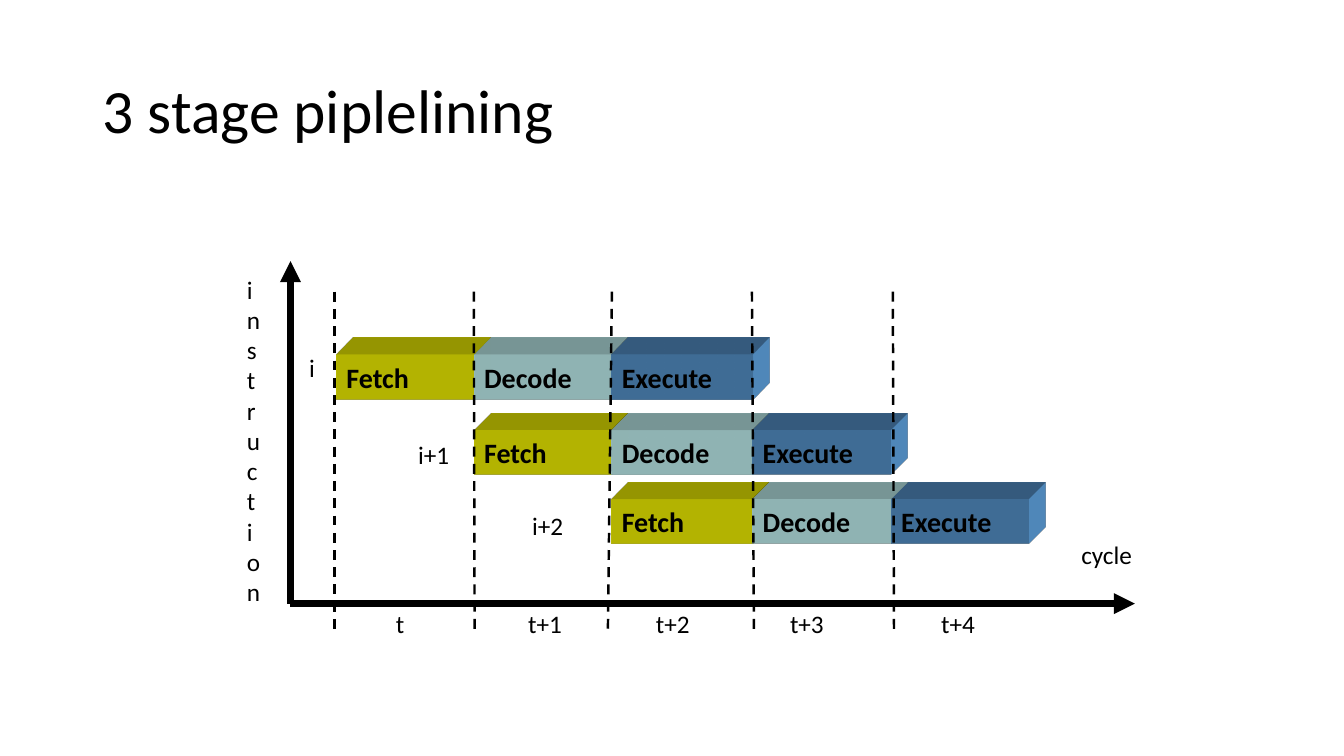
import pptx
import pptx.util
import pptx.dml.color
import pptx.enum.dml
import pptx.enum.shapes
import pptx.enum.text
import pptx.oxml
import pptx.oxml.ns

Cm = pptx.util.Cm
BLACK = pptx.dml.color.RGBColor(0x00, 0x00, 0x00)
YELLOW = pptx.dml.color.RGBColor(0xFF, 0xFF, 0x00)
CYAN = pptx.dml.color.RGBColor(0xCC, 0xFF, 0xFF)
BLUE = pptx.dml.color.RGBColor(0x5B, 0x9B, 0xD5)
SPACE = pptx.oxml.ns.nsdecls("a")

deck = pptx.Presentation()
deck.slide_width = Cm(33.87)
deck.slide_height = Cm(19.05)
slide = deck.slides.add_slide(deck.slide_layouts[6])


def write(shape, words, size, wrap=False, bold=False):
    frame = shape.text_frame
    frame.text = words
    frame.word_wrap = wrap
    para = frame.paragraphs[0]
    para.alignment = pptx.enum.text.PP_ALIGN.LEFT
    font = para.runs[0].font
    font.name = "Calibri"
    font.size = pptx.util.Pt(size)
    font.bold = bold
    font.color.rgb = BLACK
    return frame


def draw(left, top, right, bottom, width):
    line = slide.shapes.add_connector(
        pptx.enum.shapes.MSO_CONNECTOR.STRAIGHT,
        Cm(left), Cm(top), Cm(right), Cm(bottom))
    line.line.color.rgb = BLACK
    line.line.width = pptx.util.Pt(width)
    line._element.spPr.append(pptx.oxml.parse_xml(f"<a:effectLst {SPACE}/>"))
    return line


title = slide.shapes.add_textbox(Cm(2.34), Cm(1.02), Cm(29.21), Cm(3.68))
frame = write(title, "3 stage piplelining", 44, wrap=True)
frame.vertical_anchor = pptx.enum.text.MSO_ANCHOR.MIDDLE
frame.paragraphs[0].line_spacing = 0.9

edges = [8.48, 11.95, 15.42, 18.97, 22.46, 25.93]
stages = [("Fetch", YELLOW), ("Decode", CYAN), ("Execute", BLUE)]
for row, top in enumerate([8.94, 10.85, 12.57]):
    for col, (name, color) in enumerate(stages, row):
        block = slide.shapes.add_shape(
            pptx.enum.shapes.MSO_SHAPE.RECTANGLE,
            Cm(edges[col]), Cm(top), Cm(edges[col + 1] - edges[col]), Cm(1.12))
        block.shadow.inherit = False
        block.fill.solid()
        block.fill.fore_color.rgb = color
        block.line.fill.background()
        frame = write(block, name, 20, bold=True)
        frame.vertical_anchor = pptx.enum.text.MSO_ANCHOR.MIDDLE
        props = block._element.spPr
        props.append(pptx.oxml.parse_xml(
            f'<a:scene3d {SPACE}><a:camera prst="legacyObliqueTopRight"/>'
            '<a:lightRig rig="legacyFlat3" dir="b"/></a:scene3d>'))
        props.append(pptx.oxml.parse_xml(
            f'<a:sp3d {SPACE} extrusionH="430200" prstMaterial="legacyMatte">'
            '<a:bevelT w="13500" h="13500" prst="angle"/>'
            '<a:bevelB w="13500" h="13500" prst="angle"/>'
            f'<a:extrusionClr><a:srgbClr val="{color}"/></a:extrusionClr>'
            '</a:sp3d>'))

for right, top in [(7.32, 6.58), (28.6, 15.21)]:
    axis = draw(7.32, 15.21, right, top, 5)
    axis.line._get_or_add_ln().append(
        pptx.oxml.parse_xml(f'<a:tailEnd {SPACE} type="triangle"/>'))

guides = [(8.43, 8.43, 15.85), (11.94, 11.96, 15.85), (15.42, 15.32, 15.85),
          (18.95, 19, 16), (22.5, 22.53, 16)]
for start, end, bottom in guides:
    guide = draw(start, 7.35, end, bottom, 1.75)
    guide.line.dash_style = pptx.enum.dml.MSO_LINE.DASH

labels = [("t", 9.73, 15.21, 0.69), ("t+1", 13.06, 15.21, 1.42),
          ("t+2", 16.28, 15.21, 1.42), ("t+3", 19.66, 15.21, 1.42),
          ("t+4", 23.47, 15.21, 1.42), ("i", 7.54, 8.76, 0.66),
          ("i+1", 10.29, 10.95, 1.37), ("i+2", 13.16, 12.73, 1.37),
          ("cycle", 27, 13.46, 1.96)]
for words, left, top, width in labels:
    label = slide.shapes.add_textbox(Cm(left), Cm(top), Cm(width), Cm(1.02))
    write(label, words, 18)

side = slide.shapes.add_textbox(Cm(5.97), Cm(6.78), Cm(0.81), Cm(8.64))
write(side, "instruction", 18, wrap=True)

deck.save("out.pptx")
